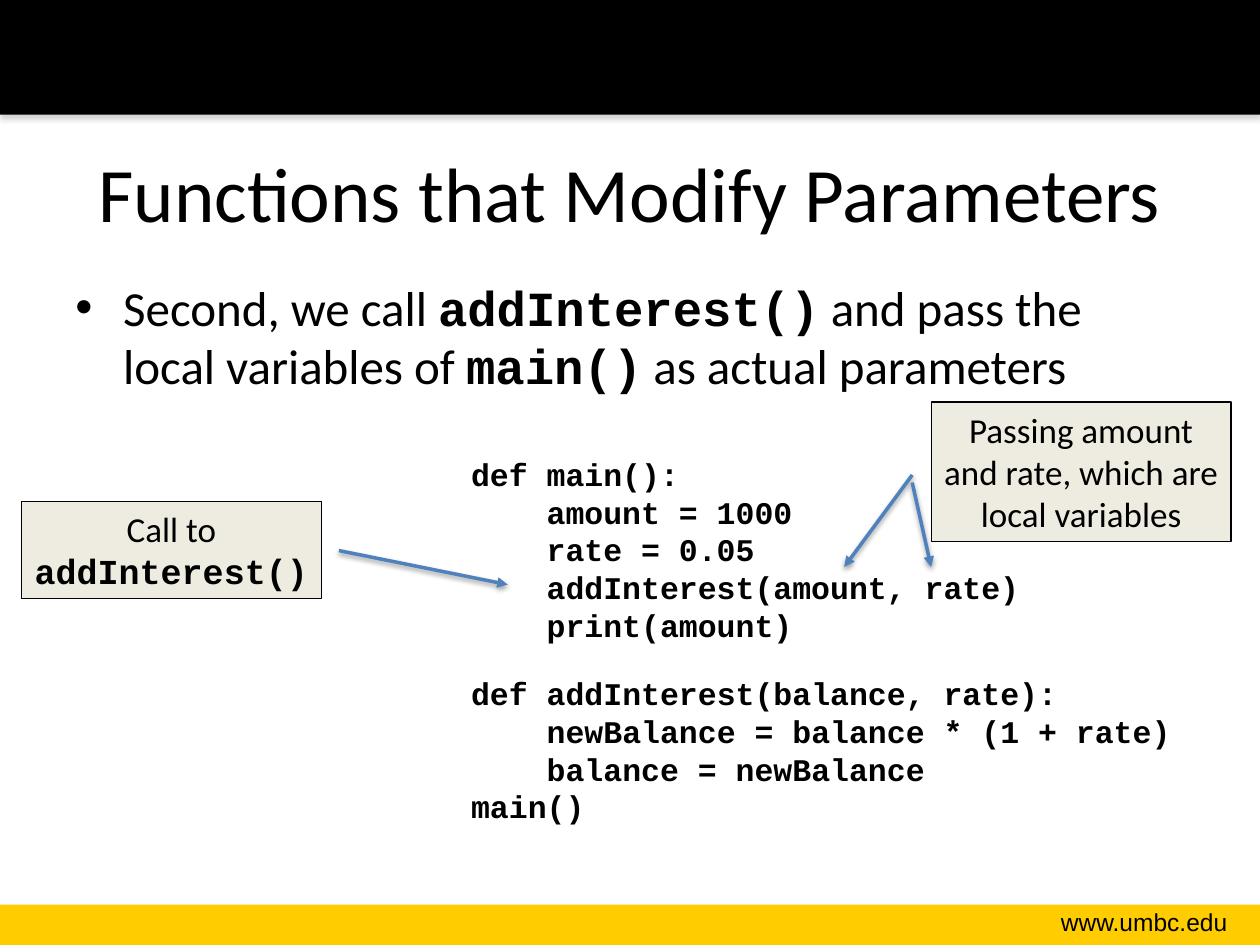
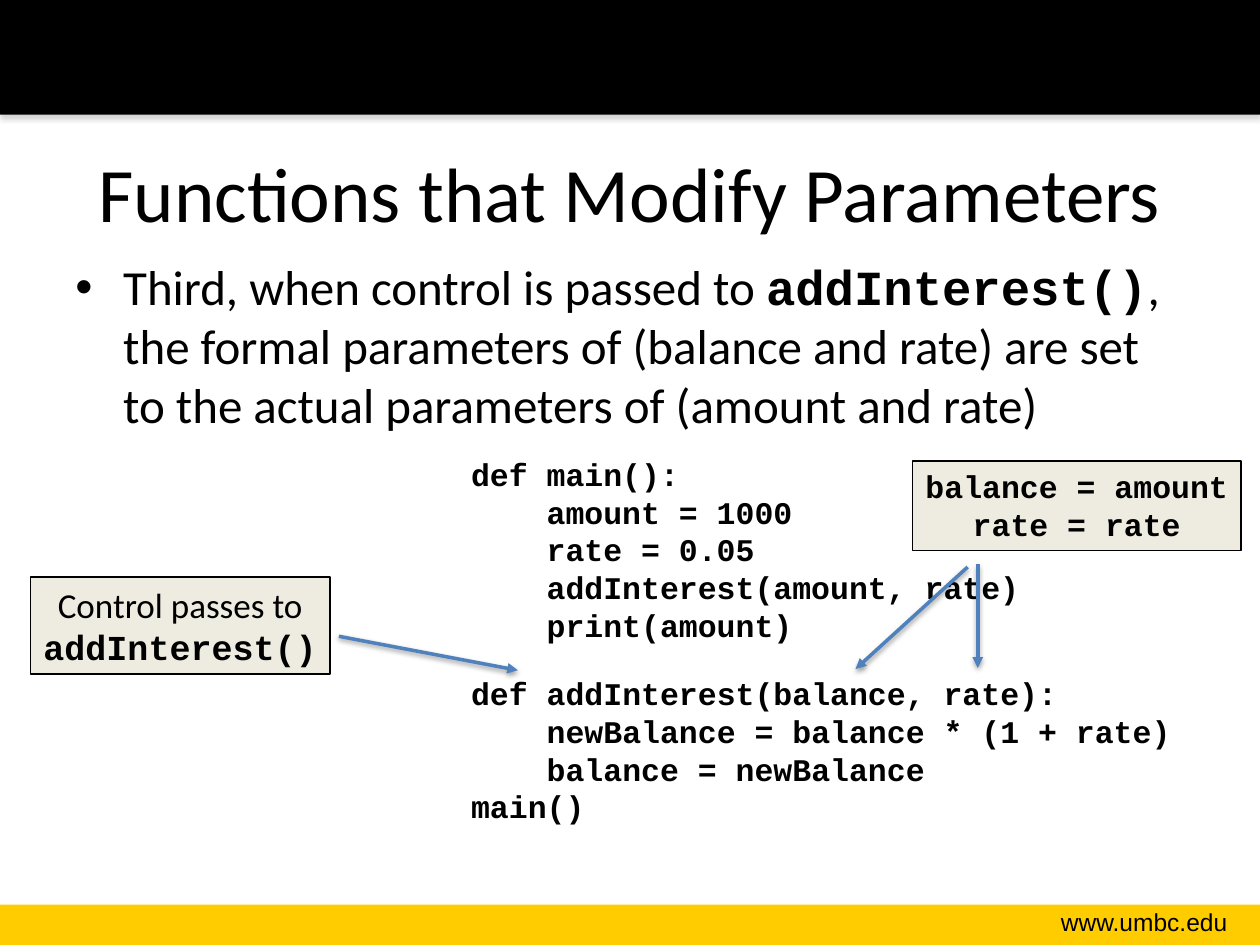
from lxml.etree import SubElement as Sub
from pptx import Presentation as Deck
from pptx.dml.color import RGBColor as Rgb
from pptx.enum.shapes import MSO_CONNECTOR as Link, MSO_SHAPE as Kind
from pptx.enum.text import MSO_ANCHOR as Anchor, PP_ALIGN as Align
from pptx.oxml.ns import qn
from pptx.util import Inches, Pt

COLORS = {"ink": "000000", "gold": "FFCC00", "note": "EEECE1",
          "arrow": "4F81BD", "shade": "808080"}
SANS, MONO = "Calibri", "Courier New"
TITLE = "Functions that Modify Parameters"
MAIN = """def main():
    amount = 1000
    rate = 0.05
    addInterest(amount, rate)
    print(amount)"""
ADD = """def addInterest(balance, rate):
    newBalance = balance * (1 + rate)
    balance = newBalance"""


def color(name):
    return Rgb.from_string(COLORS[name])


def inch(vals):
    return [Inches(v) for v in vals]


def shade(props, name, alpha, dist):
    """Add a soft shadow that falls straight down."""
    list_ = props.find(qn("a:effectLst"))
    if list_ is None:
        list_ = Sub(props, qn("a:effectLst"))
    glow = Sub(list_, qn("a:outerShdw"), blurRad=str(Pt(3.1)),
               dist=str(Pt(dist)), dir="5400000", rotWithShape="0")
    tint = Sub(glow, qn("a:srgbClr"), val=COLORS[name])
    Sub(tint, qn("a:alpha"), val=str(alpha * 1000))


def write(shape, *paras, size=20, font=SANS, bold=False, align=Align.LEFT,
          anchor=Anchor.TOP, wrap=True, bullet=False):
    """Fill a shape with text; parts between backticks are set as code."""
    frame = shape.text_frame
    frame.word_wrap = wrap
    frame.vertical_anchor = anchor
    for i, text in enumerate(paras):
        para = frame.add_paragraph() if i else frame.paragraphs[0]
        para.alignment = align
        if bullet:
            props = para._p.get_or_add_pPr()
            props.set("marL", str(Inches(0.38)))
            props.set("indent", str(Inches(-0.38)))
            Sub(props, qn("a:buFont"), typeface="Arial")
            Sub(props, qn("a:buChar"), char="•")
        for j, part in enumerate(text.split("`")):
            code = j % 2 == 1
            for k, line in enumerate(part.split("\n")):
                if k:
                    para.add_line_break()
                if not line:
                    continue
                run = para.add_run()
                run.text = line
                run.font.size = Pt(size)
                run.font.name = MONO if code else font
                run.font.bold = bold or code
                run.font.color.rgb = color("ink")


def label(slide, at, *paras, **style):
    write(slide.shapes.add_textbox(*inch(at)), *paras, **style)


def block(slide, at, fill):
    shape = slide.shapes.add_shape(Kind.RECTANGLE, *inch(at))
    shape.shadow.inherit = False
    shape.fill.solid()
    shape.fill.fore_color.rgb = color(fill)
    shape.line.fill.background()
    return shape


def note(slide, at, *paras, **style):
    box = block(slide, at, "note")
    box.line.color.rgb = color("ink")
    box.line.width = Pt(0.75)
    write(box, *paras, align=Align.CENTER, anchor=Anchor.TOP, **style)


def arrow(slide, start, end):
    line = slide.shapes.add_connector(Link.STRAIGHT, *inch(start + end))
    line.line.color.rgb = color("arrow")
    line.line.width = Pt(2)
    Sub(line.line._get_or_add_ln(), qn("a:tailEnd"), type="triangle")
    shade(line._element.spPr, "ink", 38, 1.6)


def page(deck, point, top):
    """Start a slide with bands, footer, title, bullet and the program."""
    slide = deck.slides.add_slide(deck.slide_layouts[6])
    block(slide, (0, 7.18, 10, 0.32), "gold")
    band = block(slide, (0, 0, 10, 0.91), "ink")
    shade(band._element.spPr, "shade", 35, 1.8)
    label(slide, (7.85, 7.15, 1.99, 0.34), "www.umbc.edu",
          size=14, font="Arial", align=Align.RIGHT)
    label(slide, (0.5, 0.9, 9, 1.25), TITLE,
          size=44, align=Align.CENTER, anchor=Anchor.MIDDLE)
    label(slide, (0.5, top, 9, 1.68), point, size=28, bullet=True)
    code = dict(size=18, font=MONO, bold=True, wrap=False)
    label(slide, (3.64, 3.56, 4.57, 1.62), MAIN, **code)
    label(slide, (3.64, 5.3, 5.78, 1.31), ADD, "main()", **code)
    return slide


def main():
    deck = Deck()
    deck.slide_width, deck.slide_height = Inches(10), Inches(7.5)

    # The call
    call = page(deck, "Second, we call `addInterest()` and pass the local "
                "variables of `main()` as actual parameters", 2.15)
    note(call, (0.17, 3.98, 2.38, 0.77), "Call to `addInterest()`")
    arrow(call, (2.69, 4.37), (4.03, 4.64))
    note(call, (7.39, 3.19, 2.38, 1.11),
         "Passing amount and rate, which are local variables")
    arrow(call, (7.24, 3.77), (6.7, 4.5))
    arrow(call, (7.24, 3.83), (7.39, 4.5))

    # The passing of control
    enter = page(deck, "Third, when control is passed to `addInterest()`, "
                 "the formal parameters of (balance and rate) are set to "
                 "the actual parameters of (amount and rate)", 1.99)
    note(enter, (0.24, 4.58, 2.38, 0.77), "Control passes to `addInterest()`")
    arrow(enter, (2.69, 5.05), (4.11, 5.32))
    note(enter, (7.24, 3.66, 2.61, 0.71), "balance = amount", "rate = rate",
         size=18, font=MONO, bold=True)
    arrow(enter, (7.68, 4.5), (6.79, 5.31))
    arrow(enter, (7.76, 4.48), (7.76, 5.3))

    deck.save("out.pptx")


if __name__ == "__main__":
    main()
